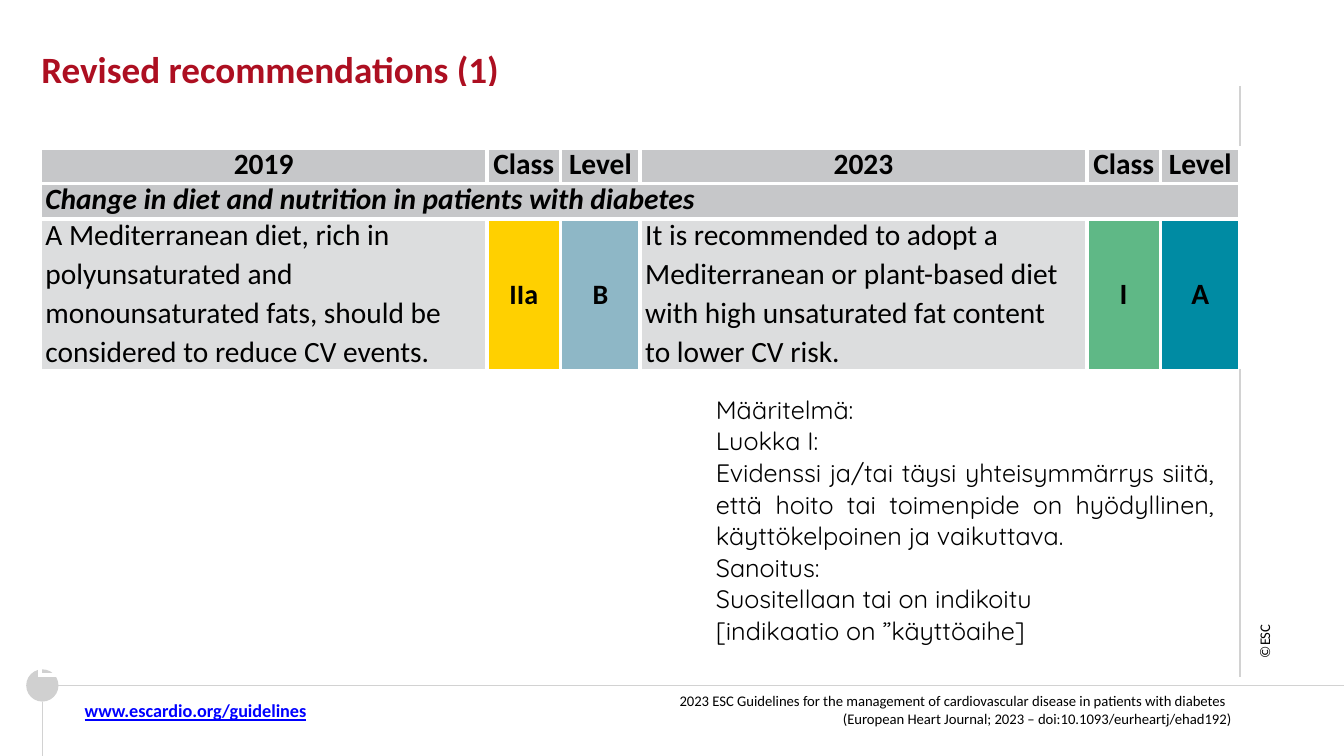
from lxml import etree
from pptx import Presentation
from pptx.dml.color import RGBColor
from pptx.enum.shapes import MSO_CONNECTOR, MSO_SHAPE
from pptx.enum.text import MSO_ANCHOR, MSO_AUTO_SIZE, PP_ALIGN
from pptx.oxml.ns import qn
from pptx.util import Inches, Pt

STRAIGHT, OVAL = MSO_CONNECTOR.STRAIGHT, MSO_SHAPE.OVAL
TOP, MIDDLE = MSO_ANCHOR.TOP, MSO_ANCHOR.MIDDLE
LEFT, CENTER, JUSTIFY = PP_ALIGN.LEFT, PP_ALIGN.CENTER, PP_ALIGN.JUSTIFY
TITLE_ONLY = 5

BLACK = RGBColor(0x00, 0x00, 0x00)
WHITE = RGBColor(0xFF, 0xFF, 0xFF)
ESC_RED = RGBColor(0xAD, 0x0F, 0x21)
LINK_BLUE = RGBColor(0x00, 0x00, 0xFF)
RULE_GREY = RGBColor(0xD2, 0xD2, 0xD2)
DOT_GREY = RGBColor(0xD0, 0xD0, 0xD0)
HEADER_GREY = RGBColor(0xC6, 0xC7, 0xC9)
BODY_GREY = RGBColor(0xDC, 0xDD, 0xDE)
CLASS_IIA = RGBColor(0xFF, 0xD0, 0x00)
LEVEL_B = RGBColor(0x8E, 0xB7, 0xC6)
CLASS_I = RGBColor(0x5F, 0xB8, 0x86)
LEVEL_A = RGBColor(0x00, 0x8B, 0xA3)

HEADINGS = ["2019", "Class", "Level", "2023", "Class", "Level"]
COLUMN_WIDTHS = [4.43, 0.73, 0.79] * 2
ROW_HEIGHTS = [0.6, 0.35, 0.35, 1.5, 3.02]
SPACER, HEADER, TOPIC, ADVICE, DEFINITION = range(5)
ADVICE_TEXTS = {
    0: ["A Mediterranean diet, rich in",
        "polyunsaturated and monounsaturated fats, should be "
        "considered to reduce CV events."],
    3: ["It is recommended to adopt a",
        "Mediterranean or plant-based diet with high unsaturated fat content "
        "to lower CV risk."],
}
GRADES = {1: ("IIa", CLASS_IIA, 20), 2: ("B", LEVEL_B, 20),
          4: ("I", CLASS_I, 21), 5: ("A", LEVEL_A, 21)}
DEFINITION_LINES = [
    "Määritelmä:",
    "Luokka I:",
    "Evidenssi ja/tai täysi yhteisymmärrys siitä, että hoito tai toimenpide on "
    "hyödyllinen, käyttökelpoinen ja vaikuttava.",
    "Sanoitus:",
    "Suositellaan tai on indikoitu",
    "[indikaatio on ”käyttöaihe]",
]


class GuidelineSlide:
    font = "Calibri"

    def __init__(self, prs):
        self.slide = prs.slides.add_slide(prs.slide_layouts[TITLE_ONLY])

    def style(self, paragraph, text, size, color=BLACK, bold=False, italic=False,
              align=LEFT, spacing=None, indent=0, hanging=0, font=None):
        paragraph.text = text
        paragraph.alignment = align
        if spacing:
            paragraph.line_spacing = spacing
        properties = paragraph._p.get_or_add_pPr()
        properties.set("marL", str(Inches(indent)))
        properties.set("indent", str(Inches(-hanging)))
        face = paragraph.font
        face.name, face.size = font or self.font, Pt(size)
        face.bold, face.italic = bold, italic
        face.color.rgb = color
        return paragraph

    def frame(self, shape, top_margin=0):
        frame = shape.text_frame
        frame.word_wrap = True
        frame.auto_size = MSO_AUTO_SIZE.NONE
        frame.vertical_anchor = TOP
        frame.margin_left = frame.margin_right = frame.margin_bottom = 0
        frame.margin_top = Inches(top_margin)
        return frame

    def title(self, text):
        heading = self.slide.shapes.title
        heading.left, heading.top = Inches(0.41), Inches(0.44)
        heading.width, heading.height = Inches(5), Inches(0.47)
        paragraph = self.frame(heading, 0.02).paragraphs[0]
        self.style(paragraph, text, 26.5, ESC_RED, bold=True)

    def text(self, left, top, width, height, text, size, top_margin=0,
             vertical=False, **look):
        box = self.slide.shapes.add_textbox(
            Inches(left), Inches(top), Inches(width), Inches(height))
        frame = self.frame(box, top_margin)
        if vertical:
            frame._txBody.bodyPr.set("vert", "vert270")
        return self.style(frame.paragraphs[0], text, size, **look)

    def rule(self, x1, y1, x2, y2):
        line = self.slide.shapes.add_connector(
            STRAIGHT, Inches(x1), Inches(y1), Inches(x2), Inches(y2))
        line.line.color.rgb = RULE_GREY
        line.line.width = Pt(1)
        etree.SubElement(line._element.spPr, qn("a:effectLst"))

    def dot(self, x, y, diameter):
        dot = self.slide.shapes.add_shape(
            OVAL, Inches(x - diameter / 2), Inches(y - diameter / 2),
            Inches(diameter), Inches(diameter))
        dot.shadow.inherit = False
        dot.fill.solid()
        dot.fill.fore_color.rgb = DOT_GREY
        dot.line.fill.background()

    def table(self, left, top, widths, heights):
        frame = self.slide.shapes.add_table(
            len(heights), len(widths), Inches(left), Inches(top),
            Inches(sum(widths)), Inches(sum(heights)))
        table = frame.table
        table.first_row = table.horz_banding = False
        for column, width in zip(table.columns, widths):
            column.width = Inches(width)
        for row, height in zip(table.rows, heights):
            row.height = Inches(height)
        return table

    def borders(self, cell, right_color=WHITE, right_width=3):
        """Draw the cell's borders; call before setting its fill."""
        properties = cell._tc.get_or_add_tcPr()
        for side in "LRTB":
            color, width = (right_color, right_width) if side == "R" else (WHITE, 3)
            line = etree.SubElement(properties, qn(f"a:ln{side}"), w=str(Pt(width)))
            fill = etree.SubElement(line, qn("a:solidFill"))
            etree.SubElement(fill, qn("a:srgbClr"), val=str(color))

    def cell(self, cell, texts, size, fill=None, anchor=TOP, top=0, right=0,
             spacings=(None,), **look):
        """Fill a cell; the last of spacings holds for all further paragraphs."""
        cell.margin_left = cell.margin_bottom = 0
        cell.margin_top, cell.margin_right = Inches(top), Inches(right)
        cell.vertical_anchor = anchor
        if fill is None:
            cell.fill.background()
        else:
            cell.fill.solid()
            cell.fill.fore_color.rgb = fill
        frame = cell.text_frame
        for i, text in enumerate(texts):
            paragraph = frame.add_paragraph() if i else frame.paragraphs[0]
            self.style(paragraph, text, size,
                       spacing=spacings[min(i, len(spacings) - 1)], **look)


def add_recommendations(page):
    table = page.table(0.4, 0.87, COLUMN_WIDTHS, ROW_HEIGHTS)
    last = len(HEADINGS) - 1
    for row in range(len(ROW_HEIGHTS)):
        grey_edge = (RULE_GREY, 1.5) if row in (SPACER, DEFINITION) else ()
        for column in range(len(HEADINGS)):
            page.borders(table.cell(row, column), *grey_edge)
    for row in (SPACER, TOPIC, DEFINITION):
        table.cell(row, 0).merge(table.cell(row, last))

    page.cell(table.cell(SPACER, 0), [""], 18)
    for column, heading in enumerate(HEADINGS):
        page.cell(table.cell(HEADER, column), [heading], 21, HEADER_GREY,
                  spacings=[Pt(24.2)], align=CENTER, bold=True)
    page.cell(table.cell(TOPIC, 0),
              ["Change in diet and nutrition in patients with diabetes"], 21,
              HEADER_GREY, spacings=[Pt(24.2)], indent=0.05, bold=True, italic=True)
    for column, advice in ADVICE_TEXTS.items():
        page.cell(table.cell(ADVICE, column), advice, 21, BODY_GREY, right=0.2,
                  spacings=[Pt(24.7), 1.09], indent=0.05)
    for column, (grade, color, size) in GRADES.items():
        page.cell(table.cell(ADVICE, column), [grade], size, color, MIDDLE,
                  align=CENTER, bold=True)
    definition = table.cell(DEFINITION, 0)
    page.cell(definition, DEFINITION_LINES, 18, top=0.23, right=0.26,
              indent=6.7, font="Quicksand")
    definition.text_frame.paragraphs[2].alignment = JUSTIFY


def main():
    prs = Presentation()
    prs.slide_width, prs.slide_height = Inches(13.33), Inches(7.5)
    page = GuidelineSlide(prs)
    page.rule(0.26, 6.8, 13.33, 6.8)
    page.rule(0.42, 6.96, 0.42, 7.5)
    page.dot(0.42, 6.8, 0.32)
    website = page.text(0.84, 6.92, 2.3, 0.25, "www.escardio.org/guidelines", 13,
                        top_margin=0.02, color=LINK_BLUE, bold=True)
    website.font.underline = True
    page.text(12.47, 6.16, 0.18, 0.37, "©ESC", 10.5, vertical=True, spacing=Pt(11.2))
    page.text(6.73, 6.85, 5.59, 0.38,
              "2023 ESC Guidelines for the management of cardiovascular disease in "
              "patients with diabetes (European Heart Journal; 2023 – "
              "doi:10.1093/eurheartj/ehad192)", 10.5,
              top_margin=0.01, spacing=1.01, indent=1.63, hanging=1.62)
    page.title("Revised recommendations (1)")
    add_recommendations(page)
    prs.save("out.pptx")


if __name__ == "__main__":
    main()
